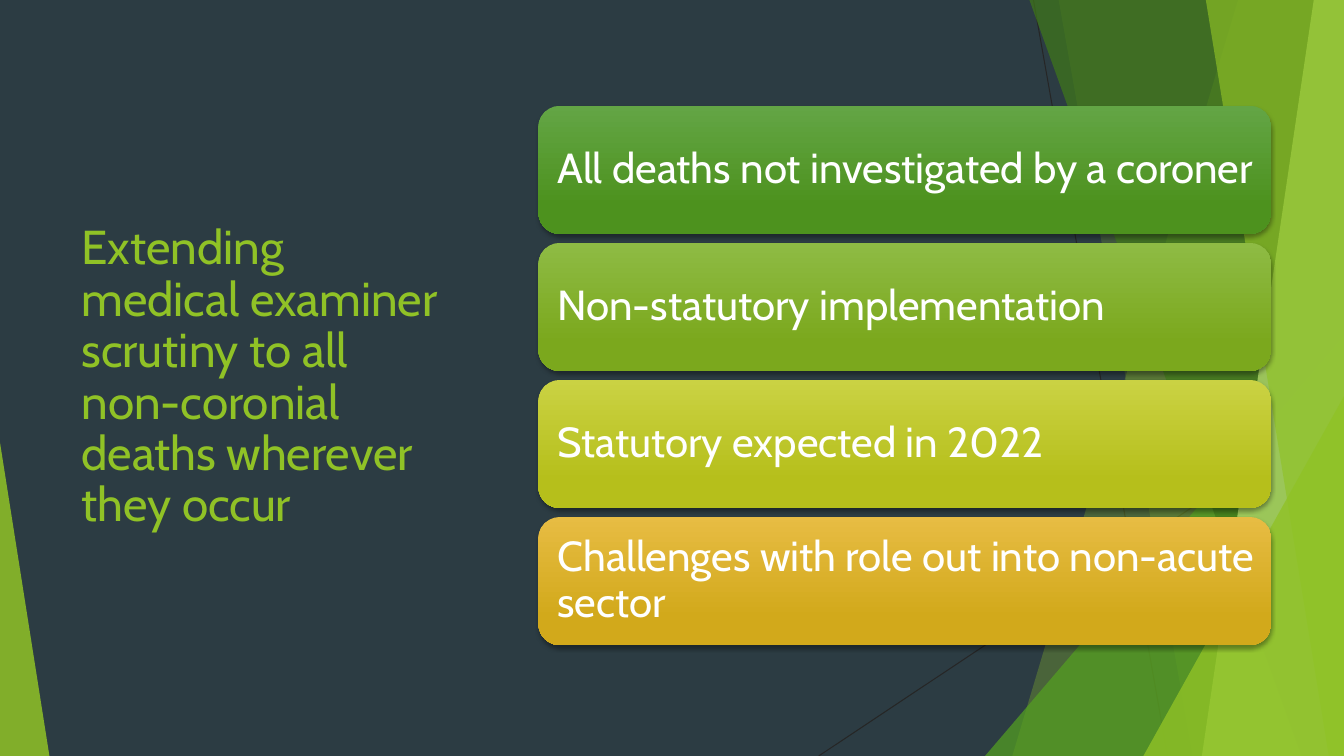
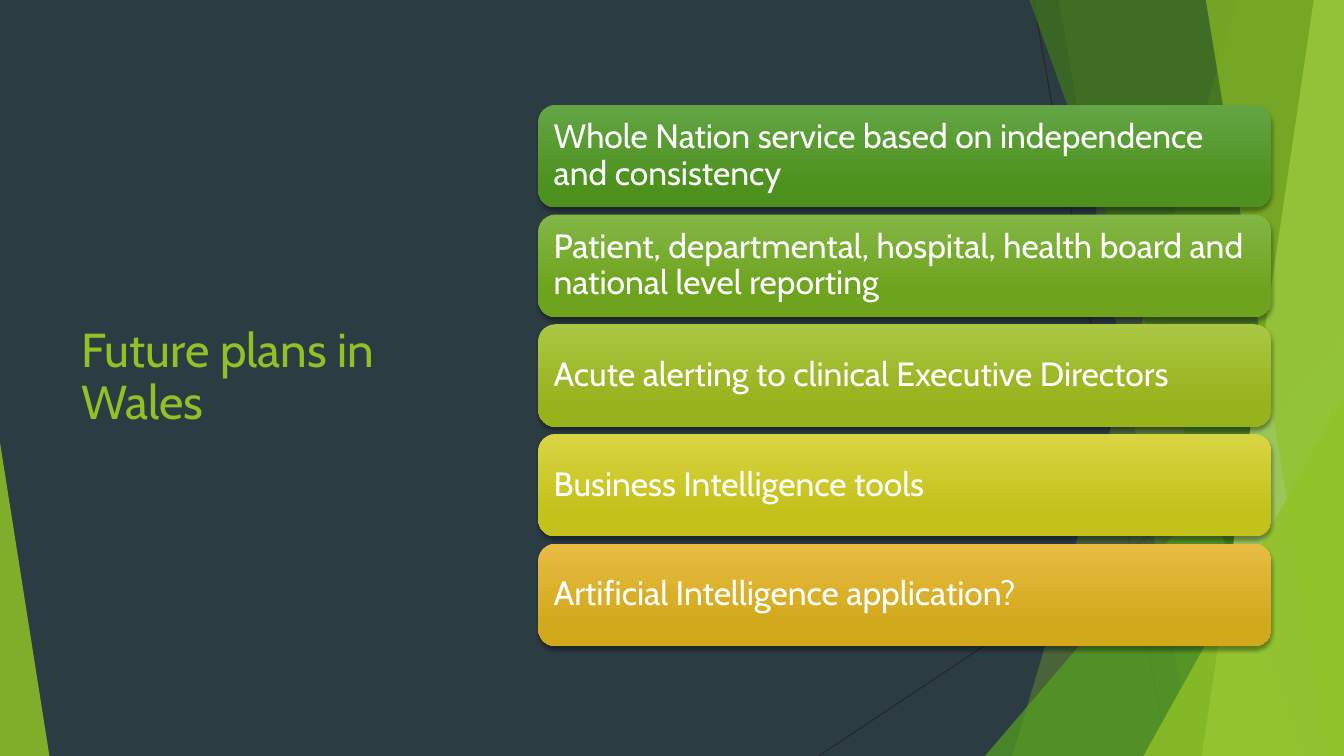
"""Build two medical examiner slides with a shared faceted backdrop."""
from dataclasses import dataclass

from lxml import etree
from pptx import Presentation
from pptx.dml.color import RGBColor
from pptx.enum.shapes import MSO_CONNECTOR, MSO_SHAPE
from pptx.enum.text import MSO_ANCHOR, PP_ALIGN
from pptx.oxml.ns import qn
from pptx.util import Inches, Pt

STRAIGHT = MSO_CONNECTOR.STRAIGHT
TRIANGLE = MSO_SHAPE.ISOSCELES_TRIANGLE
ROUNDED = MSO_SHAPE.ROUNDED_RECTANGLE
MIDDLE = MSO_ANCHOR.MIDDLE
LEFT = PP_ALIGN.LEFT


@dataclass(frozen=True)
class Theme:
    """Colours, type and spacing used on every slide."""
    background: str = "2C3C43"
    ray: str = "262626"
    lime: str = "90C226"
    green: str = "54A021"
    forest: str = "3F7819"
    pale: str = "C0E474"
    white: str = "FFFFFF"
    font: str = "Cabin"
    title_size: int = 34
    line_spacing: float = 0.9
    card_gap: float = 0.07
    card_inset_left: float = 0.1
    card_inset_right: float = 0.08


THEME = Theme()
WIDTH, HEIGHT = 13.33, 7.5
TITLE_BOX = (0.71, 1.51, 3.8, 4.48)

RAYS = [(10.25, 0, 11.58, HEIGHT), (WIDTH, 4.03, 8.12, HEIGHT)]
BACK_FACETS = [(12.28, 10.04, THEME.lime, 30), (10.5, 11.83, THEME.lime, 20)]
FRONT_FACETS = [
    (10.21, 12.91, THEME.forest, 70),
    (13.03, 11.92, THEME.pale, 70),
    (11.96, 13.18, THEME.lime, 65),
]
BACK_CORNERS = [(9.77, 3.33, 3.56, 1, THEME.green, 72)]
FRONT_CORNERS = [
    (11.34, 3.93, 1.99, 1, THEME.lime, 80),
    (0, 4.39, 0.49, 0, THEME.lime, 85),
]

SLIDES = [
    ("Extending medical examiner scrutiny to all non-coronial deaths wherever they occur",
     (5.34, 1.05, 7.27, 5.35), 30, [
         ("All deaths not investigated by a coroner", "63A545", "4D921E"),
         ("Non-statutory implementation", "8EBB44", "7BA81D"),
         ("Statutory expected in 2022", "CAD243", "B6BF1B"),
         ("Challenges with role out into non-acute sector", "E7BC43", "D2A91B"),
     ]),
    ("Future plans in Wales",
     (5.34, 1.04, 7.27, 5.37), 24, [
         ("Whole Nation service based on independence and consistency", "63A545", "4D921E"),
         ("Patient, departmental, hospital, health board and national level reporting", "82B644", "6EA31D"),
         ("Acute alerting to clinical Executive Directors", "AAC744", "97B31C"),
         ("Business Intelligence tools", "D8D543", "C4C11A"),
         ("Artificial Intelligence application?", "E7BC43", "D2A91B"),
     ]),
]


def rgb(code):
    """Turn a hex code into a colour."""
    return RGBColor.from_string(code)


def inches(*lengths):
    """Convert several lengths to Inches."""
    return [Inches(length) for length in lengths]


def tint(shape, colour, opacity):
    """Give a shape a see-through fill without line or shadow."""
    shape.fill.solid()
    shape.fill.fore_color.rgb = rgb(colour)
    shape.line.fill.background()
    shape.shadow.inherit = False
    fill_colour = shape.element.spPr.find(".//" + qn("a:srgbClr"))
    etree.SubElement(fill_colour, qn("a:alpha"), val=str(opacity * 1000))


def add_rays(shapes):
    """Draw the thin dark lines behind the facets."""
    for ends in RAYS:
        ray = shapes.add_connector(STRAIGHT, *inches(*ends))
        ray.line.color.rgb = rgb(THEME.ray)
        ray.line.width = Pt(0.75)
        etree.SubElement(ray.element.spPr, qn("a:effectLst"))


def add_facets(shapes, facets):
    """Draw full-height bands from a slanted left side to the right edge."""
    for top_x, bottom_x, colour, opacity in facets:
        outline = shapes.build_freeform(*inches(top_x, 0))
        corners = [(WIDTH, 0), (WIDTH, HEIGHT), (bottom_x, HEIGHT)]
        outline.add_line_segments([inches(*corner) for corner in corners])
        tint(outline.convert_to_shape(), colour, opacity)


def add_corners(shapes, corners):
    """Draw right-angled triangles standing on the bottom edge."""
    for left, top, width, tip, colour, opacity in corners:
        corner = shapes.add_shape(TRIANGLE, *inches(left, top, width, HEIGHT - top))
        corner.adjustments[0] = tip
        tint(corner, colour, opacity)


def build_backdrop(layout, slide):
    """Assemble the facets as a group and move it to the shared layout."""
    layout.background.fill.solid()
    layout.background.fill.fore_color.rgb = rgb(THEME.background)
    backdrop = slide.shapes.add_group_shape()
    add_rays(backdrop.shapes)
    add_facets(backdrop.shapes, BACK_FACETS)
    add_corners(backdrop.shapes, BACK_CORNERS)
    add_facets(backdrop.shapes, FRONT_FACETS)
    add_corners(backdrop.shapes, FRONT_CORNERS)
    layout.shapes.element.append(backdrop.element)


def write(frame, text, size, colour):
    """Write one left-aligned paragraph centred vertically in a frame."""
    frame.word_wrap = True
    frame.vertical_anchor = MIDDLE
    paragraph = frame.paragraphs[0]
    paragraph.text = text
    paragraph.alignment = LEFT
    paragraph.line_spacing = THEME.line_spacing
    paragraph.font.name = THEME.font
    paragraph.font.size = Pt(size)
    paragraph.font.color.rgb = rgb(colour)


def add_title(slide, box, text):
    """Place the slide title in its box."""
    title = slide.shapes.add_textbox(*inches(*box))
    write(title.text_frame, text, THEME.title_size, THEME.lime)


def add_soft_shadow(shape):
    """Add a small shadow below a shape."""
    shape.shadow.inherit = False
    effects = shape.element.spPr.find(qn("a:effectLst"))
    shadow = etree.SubElement(effects, qn("a:outerShdw"), blurRad=str(Pt(3)),
                              dist=str(Pt(2)), dir="5400000", rotWithShape="0")
    black = etree.SubElement(shadow, qn("a:srgbClr"), val="000000")
    etree.SubElement(black, qn("a:alpha"), val="35000")


def add_card(slide, box, text, size, top_colour, bottom_colour):
    """Place one gradient card with its text."""
    card = slide.shapes.add_shape(ROUNDED, *inches(*box))
    card.fill.gradient()
    card.fill.gradient_angle = 270
    stops = zip(card.fill.gradient_stops, (0, 0.78), (top_colour, bottom_colour))
    for stop, position, colour in stops:
        stop.position = position
        stop.color.rgb = rgb(colour)
    card.line.fill.background()
    add_soft_shadow(card)
    frame = card.text_frame
    frame.margin_left = Inches(box[3] * THEME.card_inset_left)
    frame.margin_right = Inches(box[3] * THEME.card_inset_right)
    frame.margin_top = frame.margin_bottom = 0
    write(frame, text, size, THEME.white)


def add_cards(slide, box, cards, size):
    """Stack equal cards so that they fill the box."""
    left, top, width, height = box
    card_height = height / (len(cards) + (len(cards) - 1) * THEME.card_gap)
    pitch = card_height * (1 + THEME.card_gap)
    for row, (text, top_colour, bottom_colour) in enumerate(cards):
        card_box = (left, top + row * pitch, width, card_height)
        add_card(slide, card_box, text, size, top_colour, bottom_colour)


def main():
    """Build and save the presentation."""
    deck = Presentation()
    deck.slide_width, deck.slide_height = inches(WIDTH, HEIGHT)
    blank = deck.slide_layouts[6]
    for number, (title, cards_box, card_size, cards) in enumerate(SLIDES):
        slide = deck.slides.add_slide(blank)
        if number == 0:
            build_backdrop(blank, slide)
        add_title(slide, TITLE_BOX, title)
        add_cards(slide, cards_box, cards, card_size)
    deck.save("out.pptx")


if __name__ == "__main__":
    main()
